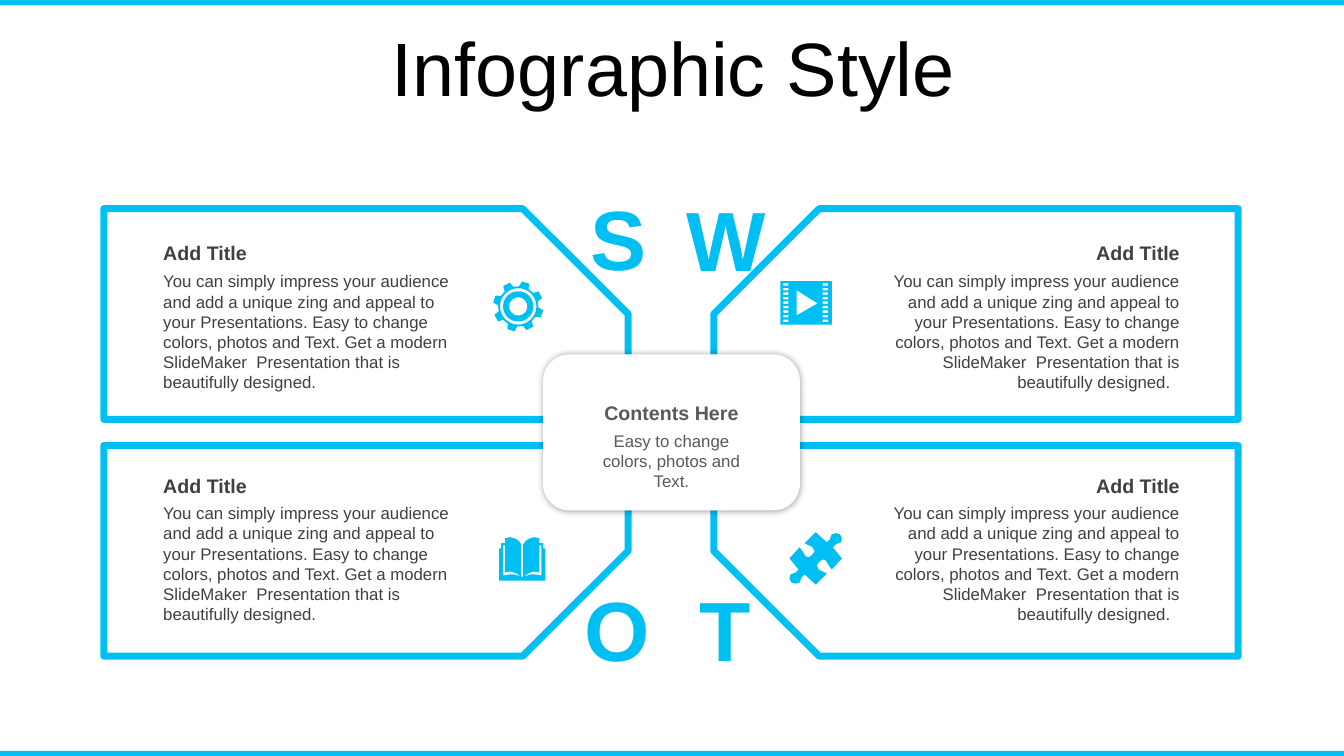
import math
from dataclasses import dataclass

from lxml import etree
from pptx import Presentation
from pptx.dml.color import RGBColor
from pptx.enum.shapes import MSO_SHAPE
from pptx.enum.text import MSO_ANCHOR, MSO_AUTO_SIZE, PP_ALIGN
from pptx.oxml.ns import qn
from pptx.util import Cm, Pt

RECTANGLE = MSO_SHAPE.RECTANGLE
SNIPPED = MSO_SHAPE.SNIP_1_RECTANGLE
ROUNDED = MSO_SHAPE.ROUNDED_RECTANGLE
TOP, MIDDLE = MSO_ANCHOR.TOP, MSO_ANCHOR.MIDDLE
FIXED, GROW = MSO_AUTO_SIZE.NONE, MSO_AUTO_SIZE.SHAPE_TO_FIT_TEXT
LEFT, CENTER, RIGHT = PP_ALIGN.LEFT, PP_ALIGN.CENTER, PP_ALIGN.RIGHT

ACCENT, WHITE, BLACK = "00BFF3", "FFFFFF", "000000"
DARK, GRAY = "404040", "595959"
PAGE_WIDTH, PAGE_HEIGHT, BAR = 13.33, 7.5, 0.05
DESCRIPTION = (
    "You can simply impress your audience and add a unique zing and appeal to "
    "your Presentations. Easy to change colors, photos and Text. Get a modern "
    "SlideMaker  Presentation that is beautifully designed."
)

Point = tuple[float, float]
Contour = list[Point]


@dataclass(frozen=True)
class Frame:
    left: float
    top: float
    width: float
    height: float

    def lengths(self) -> list[Cm]:
        return [length(side) for side in (self.left, self.top, self.width, self.height)]


@dataclass(frozen=True)
class Style:
    size: float
    color: str
    bold: bool = False
    align: PP_ALIGN = LEFT
    anchor: MSO_ANCHOR = TOP
    fit: MSO_AUTO_SIZE = GROW
    before: float = 0
    spacing: float = 1.0


@dataclass(frozen=True)
class Quadrant:
    letter: str
    letter_left: float
    letter_top: float
    right: bool
    lower: bool


QUADRANTS = [
    Quadrant("S", 5.59, 1.79, False, False),
    Quadrant("W", 6.66, 1.8, True, False),
    Quadrant("O", 5.58, 5.67, False, True),
    Quadrant("T", 6.65, 5.67, True, True),
]


def length(inches: float) -> Cm:
    return Cm(inches * 2.54)


def color(code: str) -> RGBColor:
    return RGBColor.from_string(code)


def assign(target, values: dict) -> None:
    for name, value in values.items():
        setattr(target, name, value)


def paint(shape, fill: str, line: str = "", weight: float = 0) -> None:
    shape.shadow.inherit = False
    shape.fill.solid()
    shape.fill.fore_color.rgb = color(fill)
    if line:
        shape.line.color.rgb = color(line)
        shape.line.width = Pt(weight)
    else:
        shape.line.fill.background()


def add_text(page, frame: Frame, text: str, style: Style) -> None:
    box = page.shapes.add_textbox(*frame.lengths())
    assign(box.text_frame, {"word_wrap": True, "auto_size": style.fit,
                            "vertical_anchor": style.anchor})
    para = box.text_frame.paragraphs[0]
    assign(para, {"alignment": style.align, "space_before": Pt(style.before),
                  "line_spacing": style.spacing})
    span = para.add_run()
    span.text = text
    assign(span.font, {"name": "Arial", "size": Pt(style.size), "bold": style.bold})
    span.font.color.rgb = color(style.color)


def add_panel(page, quadrant: Quadrant) -> None:
    frame = Frame(7.08 if quadrant.right else 1.03, 4.42 if quadrant.lower else 2.07, 5.2, 2.09)
    panel = page.shapes.add_shape(SNIPPED, *frame.lengths())
    panel.adjustments[0] = 0.5
    paint(panel, WHITE, ACCENT, 5)
    transform = panel.element.spPr.find(qn("a:xfrm"))
    for name, flipped in (("flipH", quadrant.right), ("flipV", quadrant.lower)):
        if flipped:
            transform.set(name, "1")


def add_hub(page) -> None:
    hub = page.shapes.add_shape(ROUNDED, *Frame(5.39, 3.52, 2.54, 1.54).lengths())
    paint(hub, WHITE, WHITE, 0.5)
    effects = hub.element.spPr.find(qn("a:effectLst"))
    shadow = etree.SubElement(effects, qn("a:outerShdw"), blurRad=str(Pt(5)), dist="0",
                              dir="0", algn="ctr", rotWithShape="0")
    tint = etree.SubElement(shadow, qn("a:srgbClr"), val=BLACK)
    etree.SubElement(tint, qn("a:alpha"), val="40000")
    add_text(page, Frame(5.74, 4.22, 1.84, 0.43), "Easy to change colors, photos and Text.",
             Style(12, GRAY, align=CENTER, fit=FIXED))
    add_text(page, Frame(5.74, 3.93, 1.84, 0.28), "Contents Here",
             Style(14, GRAY, True, CENTER, fit=FIXED))


def add_caption(page, quadrant: Quadrant) -> None:
    left = 8.59 if quadrant.right else 1.52
    align = RIGHT if quadrant.right else LEFT
    text = DESCRIPTION + "  " if quadrant.right else DESCRIPTION
    add_text(page, Frame(left, 4.94 if quadrant.lower else 2.64, 3.21, 1.31), text,
             Style(12, DARK, align=align))
    add_text(page, Frame(left, 4.65 if quadrant.lower else 2.34, 3.21, 0.34), "Add Title",
             Style(14, DARK, True, align))


def add_icon(page, center: Point, contours: list[Contour], rotation: float = 0) -> None:
    placed = [[(length(center[0] + x), length(center[1] + y)) for x, y in contour]
              for contour in contours]
    builder = page.shapes.build_freeform(*placed[0][0])
    for index, contour in enumerate(placed):
        if index:
            builder.move_to(*contour[0])
        builder.add_line_segments(contour[1:], close=True)
    icon = builder.convert_to_shape()
    paint(icon, ACCENT)
    icon.rotation = rotation


def polar(radius: float, degrees: float) -> Point:
    angle = math.radians(degrees)
    return radius * math.cos(angle), radius * math.sin(angle)


def rectangle(left: float, top: float, width: float, height: float) -> Contour:
    right, bottom = left + width, top + height
    return [(left, top), (right, top), (right, bottom), (left, bottom)]


def gear() -> list[Contour]:
    tooth = [(0.2, -14), (0.25, -8.5), (0.25, 8.5), (0.2, 14)]
    rim = [polar(radius, 45 * step - 28 + offset) for step in range(8) for radius, offset in tooth]
    rings = [[polar(radius, angle) for angle in range(0, 360, 6)] for radius in (0.18, 0.15, 0.09)]
    return [rim, *rings]


def film() -> list[Contour]:
    holes = [rectangle(left, -0.19 + 0.045 * row, 0.05, 0.025)
             for row in range(9) for left in (-0.22, 0.17)]
    return [rectangle(-0.25, -0.21, 0.51, 0.43), [(-0.09, -0.12), (-0.09, 0.13), (0.12, 0.01)], *holes]


def mirrored(contour: Contour) -> Contour:
    return [(-x, y) for x, y in contour]


def book() -> list[Contour]:
    cover = [(0, 0.17), (0.01, 0.17), (0.01, -0.15), (0.04, -0.19), (0.08, -0.21), (0.12, -0.22),
             (0.17, -0.21), (0.17, -0.16), (0.21, -0.16), (0.21, -0.11), (0.23, -0.11), (0.23, 0.21)]
    margin = [(0.17, -0.14), (0.19, -0.14), (0.19, 0.16), (0.13, 0.15), (0.08, 0.15), (0.01, 0.17),
              (0.06, 0.14), (0.11, 0.12), (0.17, 0.13)]
    return [cover + mirrored(cover)[::-1], margin, mirrored(margin)]


def puzzle(rotation: float) -> list[Contour]:
    half = [(0.24, -0.24), (0.26, -0.2), (0.25, -0.16), (0.2, -0.14), (0.17, -0.11), (0.26, 0),
            (0.16, 0.11), (0.13, 0.07), (0.1, 0.02), (0.07, 0.01), (0.04, 0.03), (0.01, 0.07),
            (0.03, 0.11), (0.07, 0.13), (0.11, 0.15), (0, 0.26), (-0.11, 0.16), (-0.14, 0.19),
            (-0.16, 0.24), (-0.2, 0.25)]
    outline = half + [(-x, -y) for x, y in half]
    return [[polar(math.hypot(x, y), math.degrees(math.atan2(y, x)) - rotation) for x, y in outline]]


def main() -> None:
    deck = Presentation()
    assign(deck, {"slide_width": length(PAGE_WIDTH), "slide_height": length(PAGE_HEIGHT)})
    page = deck.slides.add_slide(deck.slide_layouts[6])
    for top in (0, PAGE_HEIGHT - BAR):
        bar = page.shapes.add_shape(RECTANGLE, *Frame(0, top, PAGE_WIDTH, BAR).lengths())
        paint(bar, ACCENT)
    add_text(page, Frame(0.35, 0.32, 12.66, 0.79), "Infographic Style",
             Style(54, BLACK, False, CENTER, MIDDLE, FIXED, 10, 0.9))
    for quadrant in QUADRANTS:
        add_panel(page, quadrant)
    add_hub(page)
    for quadrant in QUADRANTS:
        add_text(page, Frame(quadrant.letter_left, quadrant.letter_top, 1.08, 1.11),
                 quadrant.letter, Style(60, ACCENT, True, CENTER, MIDDLE))
        add_caption(page, quadrant)
    add_icon(page, (5.18, 5.55), book())
    add_icon(page, (7.99, 3), film())
    add_icon(page, (5.14, 3.04), gear())
    add_icon(page, (8.09, 5.54), puzzle(45), 45)
    deck.save("out.pptx")


if __name__ == "__main__":
    main()
